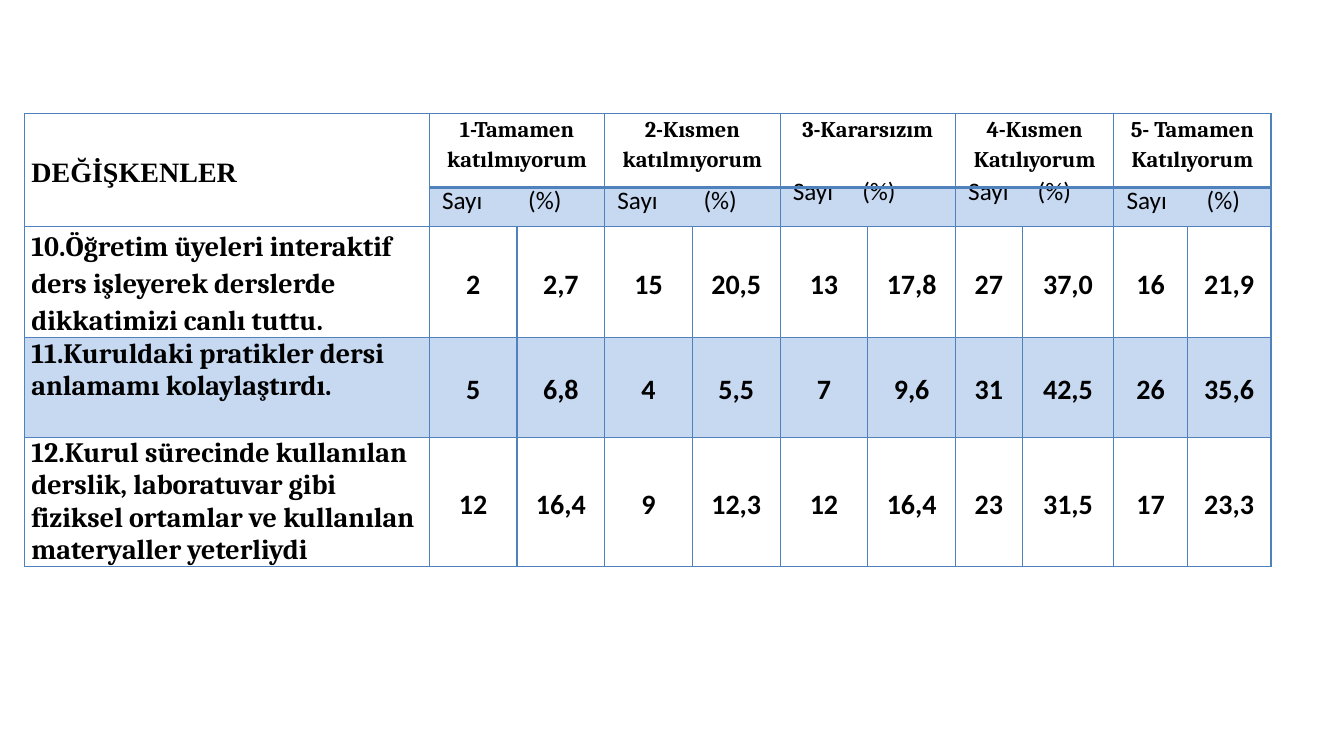
from dataclasses import dataclass

from lxml.etree import SubElement
from pptx import Presentation
from pptx.dml.color import RGBColor
from pptx.enum.text import MSO_ANCHOR as Anchor, PP_ALIGN as Align
from pptx.oxml.ns import qn
from pptx.util import Cm, Pt


@dataclass(frozen=True)
class Theme:
    text: str = "000000"
    border: str = "4F81BD"
    band: str = "C6D9F1"
    heading_font: str = "Times New Roman"
    label_font: str = "Cambria"
    number_font: str = "Calibri"
    body_size: int = 20
    subheading_size: int = 18
    group_size: int = 16
    thin: float = 1
    thick: float = 2.25
    spacing: float = 1.15
    margin: float = 0.18


COLUMN_WIDTHS = [10.21] + [2.21] * 6 + [1.68, 2.31, 1.85, 2.11]
ROW_HEIGHTS = [1.85, 0.99] + [2.51] * 3

# Answer, tab stop of "(%)" and bottom margin of the subheading, in cm
ANSWERS = [
    ("1-Tamamen katılmıyorum", 2.17, 0),
    ("2-Kısmen katılmıyorum", 2.17, 0),
    ("3-Kararsızım", 1.75, 0.46),
    ("4-Kısmen Katılıyorum", 1.75, 0.46),
    ("5- Tamamen Katılıyorum", 2.02, 0),
]

STATEMENTS = [
    ("10.Öğretim üyeleri interaktif ders işleyerek derslerde dikkatimizi canlı tuttu.",
     ["2", "2,7", "15", "20,5", "13", "17,8", "27", "37,0", "16", "21,9"]),
    ("11.Kuruldaki pratikler dersi anlamamı kolaylaştırdı.",
     ["5", "6,8", "4", "5,5", "7", "9,6", "31", "42,5", "26", "35,6"]),
    ("12.Kurul sürecinde kullanılan derslik, laboratuvar gibi fiziksel ortamlar "
     "ve kullanılan materyaller yeterliydi",
     ["12", "16,4", "9", "12,3", "12", "16,4", "23", "31,5", "17", "23,3"]),
]


class SlideBuilder:
    def __init__(self, slide, theme):
        self.slide = slide
        self.theme = theme

    def table(self, left, top, widths, heights):
        frame = self.slide.shapes.add_table(
            len(heights), len(widths), Cm(left), Cm(top), Cm(sum(widths)), Cm(sum(heights)))
        grid = frame.table
        grid.first_row = grid.horz_banding = False
        for column, width in zip(grid.columns, widths):
            column.width = Cm(width)
        for row, height in zip(grid.rows, heights):
            row.height = Cm(height)
        return grid

    def frame_cell(self, cell, top, bottom, fill=None):
        """Draw the borders of a cell, then its fill."""
        thin = self.theme.thin
        properties = cell._tc.get_or_add_tcPr()
        for side, width in (("L", thin), ("R", thin), ("T", top), ("B", bottom)):
            line = SubElement(properties, qn(f"a:ln{side}"), w=str(Pt(width)))
            solid = SubElement(line, qn("a:solidFill"))
            SubElement(solid, qn("a:srgbClr"), val=self.theme.border)
        if fill:
            cell.fill.solid()
            cell.fill.fore_color.rgb = RGBColor.from_string(fill)
        else:
            cell.fill.background()

    def cell_text(self, cell, text, font, size, bold=True, align=Align.LEFT,
                  anchor=Anchor.MIDDLE, spacing=None, tab=None):
        cell.margin_left = cell.margin_right = Cm(self.theme.margin)
        cell.margin_top = cell.margin_bottom = 0
        cell.vertical_anchor = anchor
        paragraph = cell.text_frame.paragraphs[0]
        paragraph.alignment = align
        paragraph.line_spacing = spacing
        if tab:
            stops = SubElement(paragraph._p.get_or_add_pPr(), qn("a:tabLst"))
            SubElement(stops, qn("a:tab"), pos=str(Cm(tab)), algn="l")
        run = paragraph.add_run()
        run.text = text
        run.font.name = font
        run.font.size = Pt(size)
        run.font.bold = bold
        run.font.color.rgb = RGBColor.from_string(self.theme.text)

    def survey_table(self):
        theme = self.theme
        grid = self.table(0.61, 2.87, COLUMN_WIDTHS, ROW_HEIGHTS)
        for row in range(len(ROW_HEIGHTS)):
            for column in range(len(COLUMN_WIDTHS)):
                under_answers = column > 0
                self.frame_cell(
                    grid.cell(row, column),
                    top=theme.thick if under_answers and row == 1 else theme.thin,
                    bottom=theme.thick if under_answers and row == 0 else theme.thin,
                    fill=theme.band if row == 3 or under_answers and row == 1 else None)

        variables = grid.cell(0, 0)
        variables.merge(grid.cell(1, 0))
        self.cell_text(variables, "DEĞİŞKENLER", theme.heading_font, theme.body_size,
                       spacing=theme.spacing)

        for index, (answer, tab, bottom) in enumerate(ANSWERS):
            first = 1 + 2 * index
            heading, subheading = grid.cell(0, first), grid.cell(1, first)
            heading.merge(grid.cell(0, first + 1))
            subheading.merge(grid.cell(1, first + 1))
            self.cell_text(heading, answer, theme.label_font, theme.group_size,
                           align=Align.CENTER, anchor=Anchor.TOP, spacing=theme.spacing)
            self.cell_text(subheading, "Sayı\t(%)", theme.number_font, theme.subheading_size,
                           bold=False, spacing=Pt(13), tab=tab)
            subheading.margin_left = Cm(theme.margin + 0.14)
            subheading.margin_bottom = Cm(bottom)

        for row, (statement, values) in enumerate(STATEMENTS, start=2):
            self.cell_text(grid.cell(row, 0), statement, theme.label_font, theme.body_size,
                           anchor=Anchor.TOP, spacing=theme.spacing if row == 2 else None)
            for column, value in enumerate(values, start=1):
                self.cell_text(grid.cell(row, column), value, theme.number_font,
                               theme.body_size, align=Align.CENTER, spacing=theme.spacing)


def main():
    deck = Presentation()
    deck.slide_width, deck.slide_height = Cm(33.87), Cm(19.05)
    blank_layout = deck.slide_layouts[6]
    SlideBuilder(deck.slides.add_slide(blank_layout), Theme()).survey_table()
    deck.save("out.pptx")


if __name__ == "__main__":
    main()
